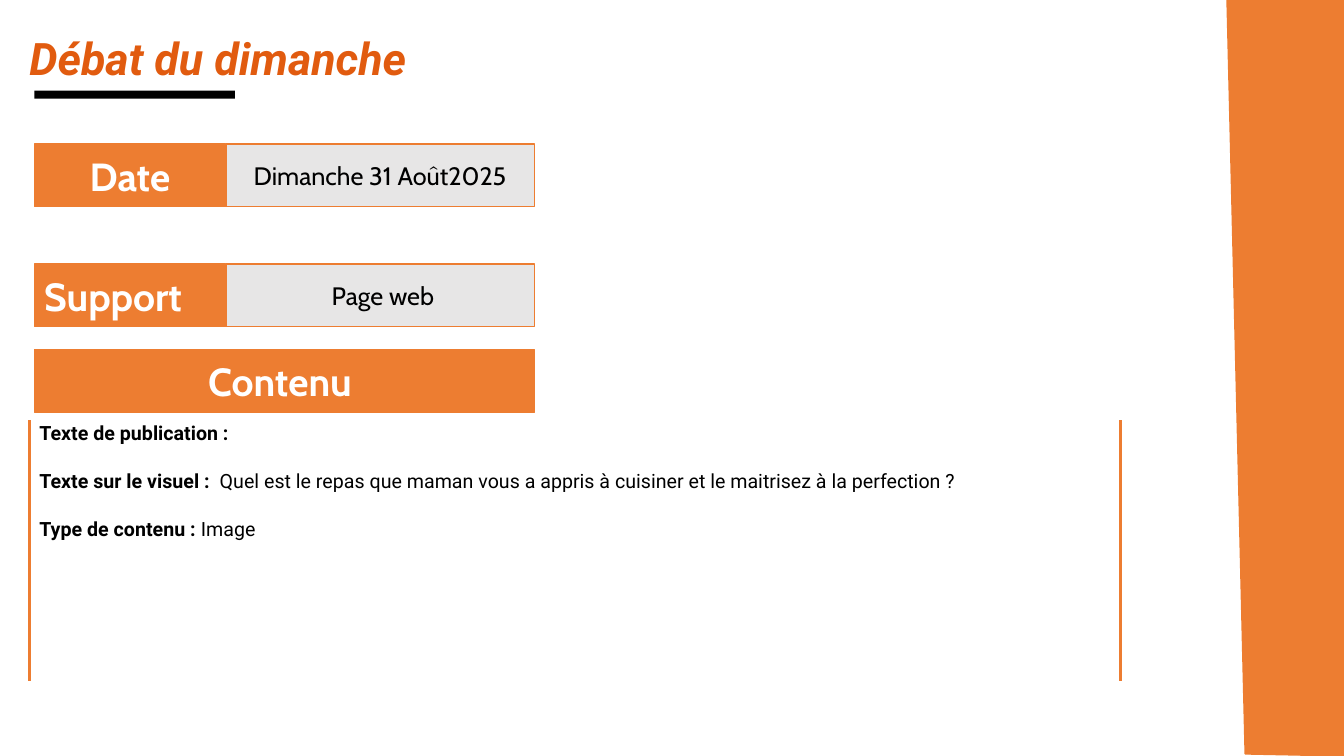
from lxml import etree
from pptx import Presentation
from pptx import util as u
from pptx.dml.color import RGBColor
from pptx.enum import shapes, text
from pptx.oxml.ns import qn

ORANGE = "ED7D31"
GREY = "E7E6E6"
BLACK = "000000"
WHITE = "FFFFFF"
LEFT, LABEL_W, VALUE_W, ROW_H = 0.34, 1.9, 3.06, 0.62


def rgb(value):
    return RGBColor.from_string(value)


def box(*lengths):
    return [u.Inches(n) for n in lengths]


def paint(sp, fill, line=None):
    sp.shadow.inherit = False
    sp.fill.solid()
    sp.fill.fore_color.rgb = rgb(fill)
    if line:
        sp.line.color.rgb = rgb(line)
        sp.line.width = u.Pt(1)
    else:
        sp.line.fill.background()


def add_run(p, content, size=14, font="Roboto", color=BLACK, bold=False, italic=False):
    r = p.add_run()
    r.text = content
    r.font.size = u.Pt(size)
    r.font.name = font
    r.font.color.rgb = rgb(color)
    r.font.bold = bold
    r.font.italic = italic


def add_rect(slide, at, fill, line=None):
    sp = slide.shapes.add_shape(shapes.MSO_SHAPE.RECTANGLE, *box(*at))
    paint(sp, fill, line)
    return sp


def add_cell(slide, at, content, fill, align=text.PP_ALIGN.CENTER, **fmt):
    tf = add_rect(slide, at, fill, ORANGE).text_frame
    tf.vertical_anchor = text.MSO_ANCHOR.MIDDLE
    p = tf.paragraphs[0]
    p.alignment = align
    add_run(p, content, font="Cabin", **fmt)


def add_label(slide, at, content, align=text.PP_ALIGN.CENTER):
    add_cell(slide, at, content, ORANGE, align, size=28, color=WHITE, bold=True)


def add_row(slide, top, label, value, align):
    add_label(slide, (LEFT, top, LABEL_W, ROW_H), label, align)
    add_cell(slide, (LEFT + LABEL_W, top, VALUE_W, ROW_H), value, GREY, size=18)


def add_side_line(slide, x):
    line = slide.shapes.add_connector(
        shapes.MSO_CONNECTOR.STRAIGHT, *box(x, 4.17, x, 6.76))
    line.line.color.rgb = rgb(ORANGE)
    line.line.width = u.Pt(2.25)
    etree.SubElement(line._element.spPr, qn("a:effectLst"))


def add_band(slide):
    builder = slide.shapes.build_freeform(*box(12.17, 0), scale=1)
    corners = [(13.33, 0), (13.34, 7.5), (12.35, 7.48)]
    builder.add_line_segments([box(*c) for c in corners], close=True)
    paint(builder.convert_to_shape(), ORANGE, ORANGE)


def place(sp, at):
    sp.left, sp.top, sp.width, sp.height = box(*at)
    tf = sp.text_frame
    tf.word_wrap = True
    tf.auto_size = text.MSO_AUTO_SIZE.NONE
    tf.vertical_anchor = text.MSO_ANCHOR.TOP
    return tf


def fill_title(sp):
    p = place(sp, (0.19, 0.25, 11.03, 0.52)).paragraphs[0]
    p.alignment = text.PP_ALIGN.JUSTIFY
    add_run(p, "Débat du dimanche", size=32, color="E15B0F", bold=True, italic=True)


def fill_details(sp, details):
    tf = place(sp, (0.29, 4.13, 10.82, 1.28))
    for i, (label, value) in enumerate(details):
        p = tf.add_paragraph() if i else tf.paragraphs[0]
        p.space_before = u.Pt(17.5 if i else 0)
        # No bullet and no indent
        pPr = p._p.get_or_add_pPr()
        pPr.set("marL", "0")
        pPr.set("indent", "0")
        etree.SubElement(pPr, qn("a:buNone"))
        add_run(p, label, bold=True)
        if value:
            add_run(p, value)


def main():
    prs = Presentation()
    prs.slide_width, prs.slide_height = box(13.33, 7.5)
    slide = prs.slides.add_slide(prs.slide_layouts[1])

    # Title and its underline
    fill_title(slide.shapes.title)
    add_rect(slide, (LEFT, 0.9, 1.99, 0.08), BLACK)

    # Orange band on the right
    add_band(slide)

    # Label and value rows
    add_row(slide, 1.43, "Date", "Dimanche 31 Août2025", text.PP_ALIGN.CENTER)
    add_row(slide, 2.62, "Support", " Page web", text.PP_ALIGN.LEFT)

    # Content block
    add_label(slide, (LEFT, 3.47, LABEL_W + VALUE_W, ROW_H), "Contenu ")
    for x in (0.29, 11.11):
        add_side_line(slide, x)
    fill_details(slide.placeholders[1], [
        ("Texte de publication :", ""),
        ("Texte sur le visuel : ", " Quel est le repas que maman vous a appris à "
         "cuisiner et le maitrisez à la perfection ?"),
        ("Type de contenu : ", "Image"),
    ])

    prs.save("out.pptx")


if __name__ == "__main__":
    main()
